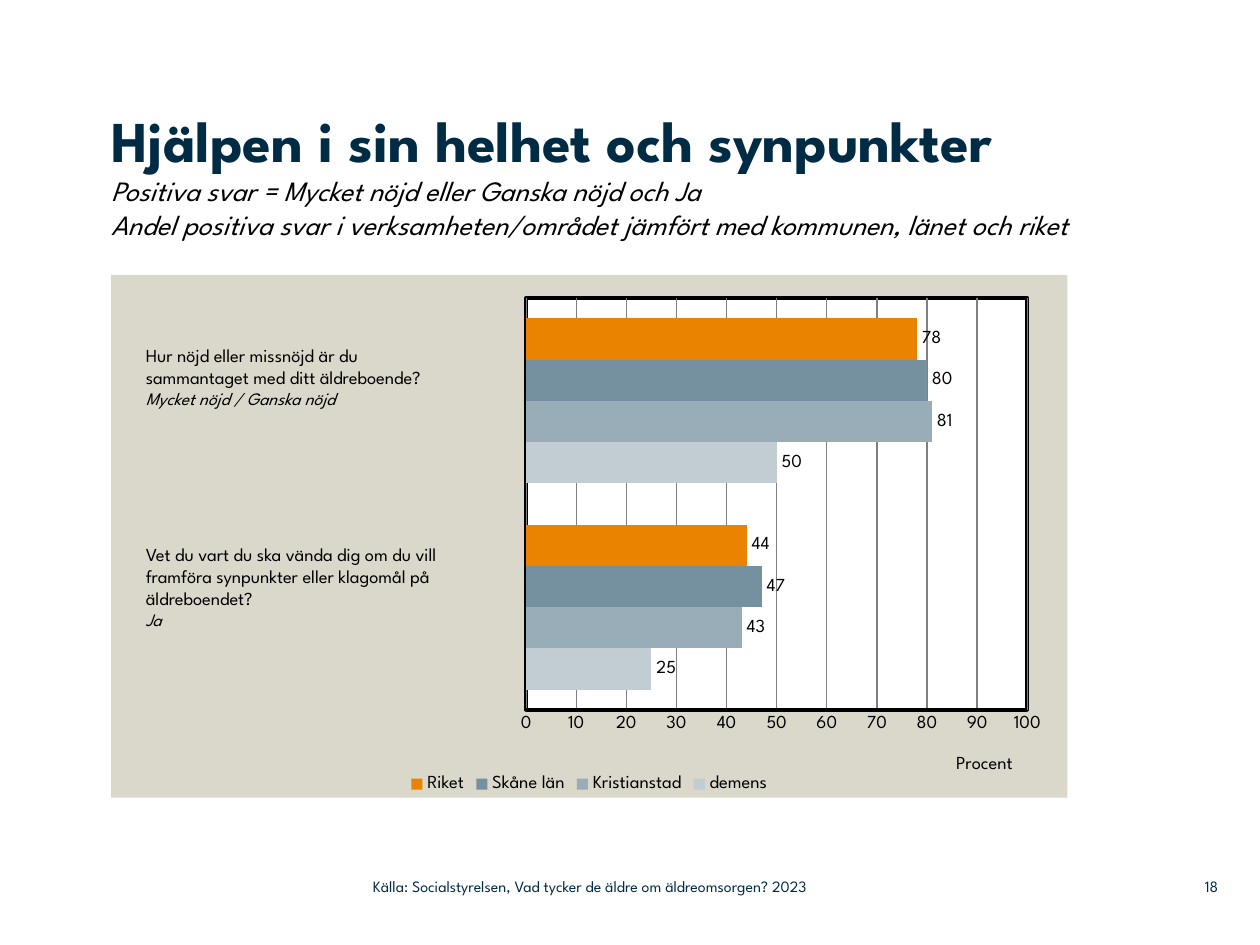
from dataclasses import dataclass

from lxml import etree
from pptx import Presentation
from pptx.chart.data import CategoryChartData
from pptx.dml.color import RGBColor
from pptx.enum.chart import XL_CHART_TYPE, XL_LABEL_POSITION, XL_LEGEND_POSITION, XL_TICK_MARK
from pptx.enum.text import MSO_ANCHOR, PP_ALIGN
from pptx.oxml import parse_xml
from pptx.oxml.ns import nsdecls, qn
from pptx.util import Cm, Pt

BAR_CLUSTERED = XL_CHART_TYPE.BAR_CLUSTERED
OUTSIDE_END = XL_LABEL_POSITION.OUTSIDE_END
LEGEND_BOTTOM = XL_LEGEND_POSITION.BOTTOM
NO_TICK = XL_TICK_MARK.NONE
TOP, MIDDLE = MSO_ANCHOR.TOP, MSO_ANCHOR.MIDDLE
LEFT, RIGHT = PP_ALIGN.LEFT, PP_ALIGN.RIGHT
TITLE_ONLY = 5


@dataclass(frozen=True)
class Theme:
    font: str = "League Spartan"
    navy: str = "002B45"
    black: str = "000000"
    grid: str = "808080"
    panel: str = "DAD7CB"
    plot: str = "FFFFFF"
    title: float = 33
    subtitle: float = 16
    body: float = 10.5
    answer: float = 10
    footer: float = 9


THEME = Theme()
SERIES = [
    ("demens", (25, 50), "C2CDD3"),
    ("Kristianstad", (43, 81), "99ADB9"),
    ("Skåne län", (47, 80), "75909F"),
    ("Riket", (44, 78), "E98300"),
]
QUESTIONS = [
    (6.81, 7.87, ["Hur nöjd eller missnöjd är du", "sammantaget med ditt äldreboende?"],
     "Mycket nöjd / Ganska nöjd"),
    (10.82, 7.75, ["Vet du vart du ska vända dig om du vill framföra synpunkter "
                   "eller klagomål på äldreboendet?"], "Ja"),
]


def style_font(font, size, color, bold=False, italic=False):
    values = {"name": THEME.font, "size": Pt(size), "bold": bold, "italic": italic}
    for attribute, value in values.items():
        setattr(font, attribute, value)
    font.color.rgb = RGBColor.from_string(color)


def set_frame(frame, anchor, inset=None):
    frame.word_wrap = True
    frame.vertical_anchor = anchor
    if inset is not None:
        for side in ("left", "top", "right", "bottom"):
            setattr(frame, f"margin_{side}", inset)


def place(shape, left, top, width, height):
    box = {"left": left, "top": top, "width": width, "height": height}
    for attribute, value in box.items():
        setattr(shape, attribute, Cm(value))


def add_title(slide):
    title = slide.shapes.title
    place(title, 2.24, 2.11, 19.79, 3.4)
    set_frame(title.text_frame, TOP, 0)
    paragraph = title.text_frame.paragraphs[0]
    paragraph.alignment = LEFT
    paragraph.line_spacing = 1
    heading = paragraph.add_run()
    heading.text = "Hjälpen i sin helhet och synpunkter"
    style_font(heading.font, THEME.title, THEME.navy, bold=True)
    for line in ("Positiva svar = Mycket nöjd eller Ganska nöjd och Ja",
                 "Andel positiva svar i verksamheten/området jämfört med kommunen, länet och riket"):
        paragraph.add_line_break()
        subtitle = paragraph.add_run()
        subtitle.text = line
        style_font(subtitle.font, THEME.subtitle, THEME.black, italic=True)


def add_question(slide, top, width, lines, answer):
    box = slide.shapes.add_textbox(Cm(2.69), Cm(top), Cm(width), Cm(2.06))
    set_frame(box.text_frame, TOP)
    box.text_frame.text = "\n".join([*lines, answer])
    *question, reply = box.text_frame.paragraphs
    for paragraph in question:
        style_font(paragraph.font, THEME.body, THEME.black)
    style_font(reply.font, THEME.answer, THEME.black, italic=True)


def add_footer(slide, left, width, text, alignment):
    box = slide.shapes.add_textbox(Cm(left), Cm(17.5), Cm(width), Cm(0.74))
    set_frame(box.text_frame, MIDDLE, 0)
    paragraph = box.text_frame.paragraphs[0]
    paragraph.text = text
    paragraph.alignment = alignment
    style_font(paragraph.font, THEME.footer, THEME.navy)


def set_layout(element, **values):
    """Give a chart part a manual layout, in fractions of the chart."""
    layout = element.find(qn("c:layout"))
    if layout is None:
        layout = etree.Element(qn("c:layout"))
        text = element.find(qn("c:tx"))
        element.insert(0 if text is None else element.index(text) + 1, layout)
    for child in list(layout):
        layout.remove(child)
    manual = etree.SubElement(layout, qn("c:manualLayout"))
    for tag, value in values.items():
        etree.SubElement(manual, qn(f"c:{tag}")).set("val", str(value))


def shape_properties(fill, line=None, width=0):
    outline = "<a:ln><a:noFill/></a:ln>"
    if line:
        outline = (f'<a:ln w="{Pt(width)}"><a:solidFill><a:srgbClr val="{line}"/>'
                   "</a:solidFill></a:ln>")
    return parse_xml(f'<c:spPr {nsdecls("c", "a")}><a:solidFill><a:srgbClr val="{fill}"/>'
                     f"</a:solidFill>{outline}</c:spPr>")


def style_value_axis(axis):
    values = {"minimum_scale": 0, "maximum_scale": 100, "major_unit": 10,
              "major_tick_mark": NO_TICK, "minor_tick_mark": NO_TICK,
              "has_major_gridlines": True}
    for attribute, value in values.items():
        setattr(axis, attribute, value)
    for line, color, width in ((axis.format.line, THEME.black, 2),
                               (axis.major_gridlines.format.line, THEME.grid, 0.75)):
        line.color.rgb = RGBColor.from_string(color)
        line.width = Pt(width)
    style_font(axis.tick_labels.font, THEME.body, THEME.black)
    caption = axis.axis_title.text_frame.paragraphs[0].add_run()
    caption.text = "Procent"
    style_font(caption.font, THEME.body, THEME.black)
    set_layout(axis.axis_title._element, xMode="edge", yMode="edge", x=0.88, y=0.91)


def add_results_chart(slide):
    results = CategoryChartData(number_format="0")
    results.categories = ["1", "2"]
    for name, shares, _ in SERIES:
        results.add_series(name, shares)
    chart = slide.shapes.add_chart(
        BAR_CLUSTERED, Cm(2.24), Cm(5.54), Cm(19.28), Cm(10.54), results).chart
    chart.has_title = False
    style_font(chart.font, THEME.body, THEME.black)
    chart.category_axis.visible = False
    style_value_axis(chart.value_axis)

    bars = chart.plots[0]
    bars.gap_width = 100
    bars.overlap = 0
    bars.vary_by_categories = False
    for series, (_, _, color) in zip(bars.series, SERIES):
        series.format.fill.solid()
        series.format.fill.fore_color.rgb = RGBColor.from_string(color)
        labels = series.data_labels
        labels.show_value = True
        labels.position = OUTSIDE_END
        style_font(labels.font, THEME.body, THEME.black)

    chart.has_legend = True
    chart.legend.position = LEGEND_BOTTOM
    chart.legend.include_in_layout = False
    style_font(chart.legend.font, THEME.body, THEME.black)

    chart_space = chart._chartSpace
    plot_area = chart_space.chart.plotArea
    set_layout(plot_area, layoutTarget="inner", xMode="edge", yMode="edge",
               x=0.434, y=0.044, w=0.524, h=0.789)
    plot_area.append(shape_properties(THEME.plot, THEME.black, 2))
    chart_space.chart.addnext(shape_properties(THEME.panel))


def main():
    presentation = Presentation()
    presentation.slide_width, presentation.slide_height = Cm(25.4), Cm(19.05)
    slide = presentation.slides.add_slide(presentation.slide_layouts[TITLE_ONLY])
    add_results_chart(slide)
    add_title(slide)
    for question in QUESTIONS:
        add_question(slide, *question)
    add_footer(slide, 23.37, 1.19, "18", RIGHT)
    add_footer(slide, 7.52, 11.25,
               "Källa: Socialstyrelsen, Vad tycker de äldre om äldreomsorgen? 2023", LEFT)
    presentation.save("out.pptx")


if __name__ == "__main__":
    main()
